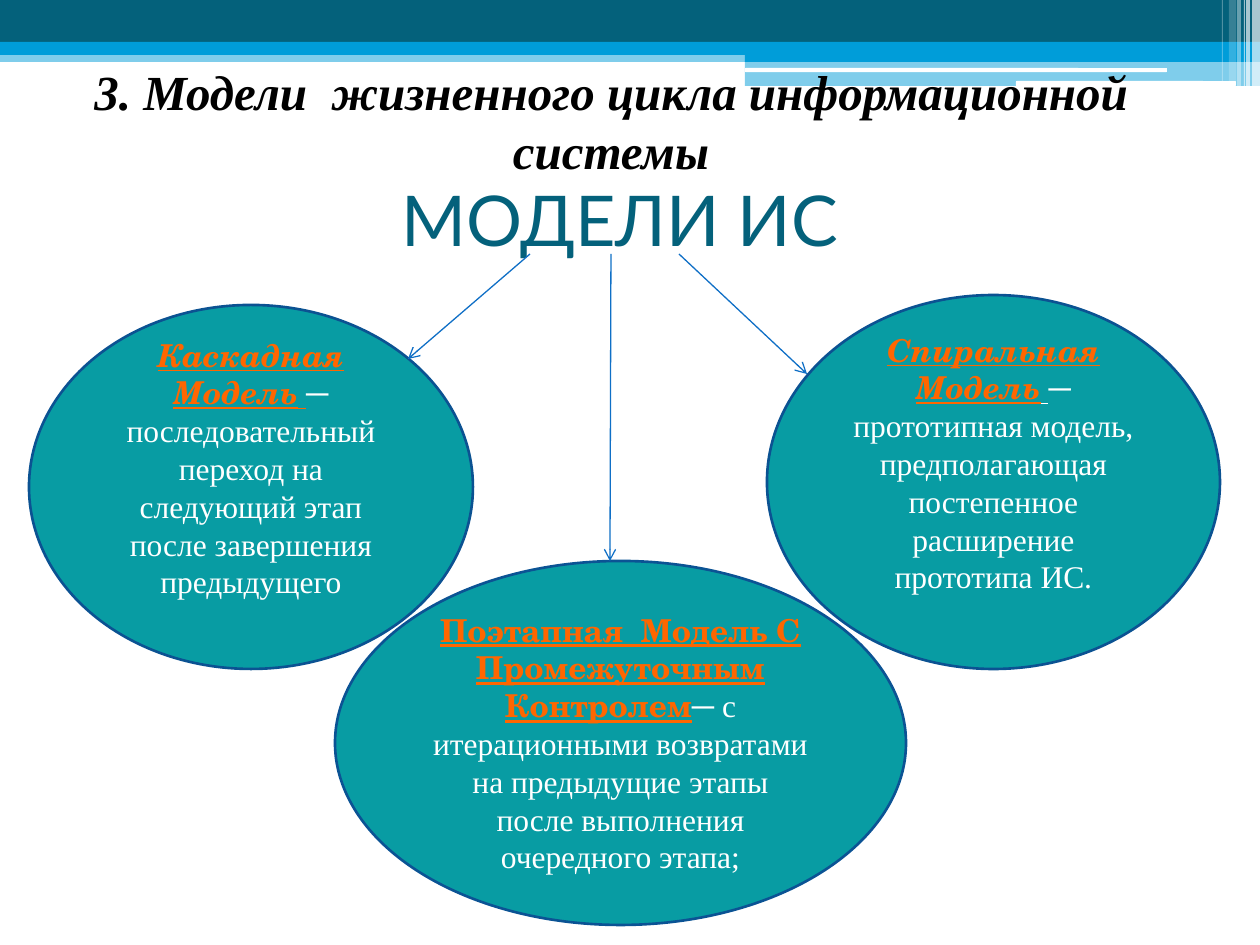
from lxml import etree
from pptx import Presentation
from pptx.dml.color import RGBColor
from pptx.enum.shapes import MSO_CONNECTOR, MSO_SHAPE
from pptx.enum.text import MSO_ANCHOR, PP_ALIGN
from pptx.oxml.ns import qn
from pptx.util import Pt

EMU_PER_PX = 914400 / 126
RECT, ROUNDED, OVAL = MSO_SHAPE.RECTANGLE, MSO_SHAPE.ROUNDED_RECTANGLE, MSO_SHAPE.OVAL
STRAIGHT = MSO_CONNECTOR.STRAIGHT
CENTER = PP_ALIGN.CENTER
MIDDLE, TOP = MSO_ANCHOR.MIDDLE, MSO_ANCHOR.TOP

DARK, BLUE, WHITE = "04617B", "009DD9", "FFFFFF"
TEAL, ARROW = "089CA3", "0F6FC6"
BODY = {"name": "Times New Roman", "size": Pt(18), "color": WHITE}
TERM = {"name": "TeX Gyre Schola", "size": Pt(18), "color": "FF6600",
        "bold": True, "underline": True}
ITALIC_TERM = {**TERM, "italic": True}
ORANGE_GAP = {**ITALIC_TERM, "name": "Times New Roman"}
WHITE_GAP = {**ORANGE_GAP, "color": WHITE}

# Header bands: left, top, width, height, colour, opacity in percent
BANDS = [
    (0, 50, 1260, 12, BLUE, 50),
    (0, 0, 1260, 43, DARK, 100),
    (0, 42, 1260, 13, BLUE, 100),
    (745, 49, 515, 13, BLUE, 100),
    (745, 61, 515, 25, BLUE, 50),
]
# White rules: left, top, width, height
RULES = [(745, 68, 422, 4), (1016, 81, 220, 5)]
# Vertical stripes at the right edge: left, width, height, opacity
STRIPES = [(1252, 8, 86, 65), (1246, 4, 86, 65), (1244, 1, 86, 60),
           (1237, 4, 86, 40), (1229, 7, 81, 20), (1222, 1, 81, 30)]

# Models: box, outline, space kept free under the text, text runs
MODELS = [
    ((29, 305, 444, 364), "0B5292", 38, [
        ("Каскадная Модель", ITALIC_TERM), (" ", ORANGE_GAP),
        ("─ последовательный переход на следующий этап после завершения "
         "предыдущего", BODY)]),
    ((335, 561, 571, 364), "0B5394", 0, [
        ("Поэтапная  Модель С Промежуточным Контролем", TERM),
        ("─ с итерационными возвратами на предыдущие этапы после выполнения "
         "очередного этапа;", BODY)]),
    ((767, 295, 453, 374), "0B5292", 38, [
        ("Спиральная Модель", ITALIC_TERM), (" ", WHITE_GAP),
        ("─ прототипная модель, предполагающая постепенное расширение "
         "прототипа ИС.", BODY)]),
]
ARROWS = [(530, 254, 408, 359), (611, 254, 610, 561), (679, 254, 807, 374)]


def px(value):
    return round(value * EMU_PER_PX)


def rgb(color):
    return RGBColor.from_string(color)


def add_block(slide, kind, box, color, opacity=100):
    shape = slide.shapes.add_shape(kind, *map(px, box))
    shape.shadow.inherit = False
    shape.fill.solid()
    shape.fill.fore_color.rgb = rgb(color)
    shape.line.fill.background()
    if opacity < 100:
        fill = shape.fill._xPr.find(qn("a:solidFill"))
        etree.SubElement(fill[0], qn("a:alpha"), val=str(opacity * 1000))
    return shape


def write_text(shape, runs, anchor):
    frame = shape.text_frame
    frame.word_wrap = True
    frame.vertical_anchor = anchor
    paragraph = frame.paragraphs[0]
    paragraph.alignment = CENTER
    for text, style in runs:
        run = paragraph.add_run()
        run.text = text
        for name, value in style.items():
            if name == "color":
                run.font.color.rgb = rgb(value)
            else:
                setattr(run.font, name, value)


def add_header(slide):
    for *box, color, opacity in BANDS:
        add_block(slide, RECT, box, color, opacity)
    for box in RULES:
        add_block(slide, ROUNDED, box, WHITE)
    for left, width, height, opacity in STRIPES:
        add_block(slide, RECT, (left, 0, width, height), WHITE, opacity)


def set_title(slide):
    title = slide.shapes.title
    title.left, title.top, title.width, title.height = map(px, (53, 145, 1134, 147))
    style = {"name": "Lato", "size": Pt(40), "color": DARK}
    write_text(title, [("МОДЕЛИ ИС", style)], MIDDLE)


def add_model(slide, box, outline, space_below, runs):
    shape = add_block(slide, OVAL, box, TEAL)
    shape.line.color.rgb = rgb(outline)
    shape.line.width = Pt(1.5)
    shape.text_frame.margin_bottom += px(space_below)
    write_text(shape, runs, MIDDLE)


def add_arrow(slide, ends):
    connector = slide.shapes.add_connector(STRAIGHT, *map(px, ends))
    connector.line.color.rgb = rgb(ARROW)
    connector.line.width = Pt(0.75)
    etree.SubElement(connector.line._get_or_add_ln(), qn("a:tailEnd"), type="arrow")
    etree.SubElement(connector._element.spPr, qn("a:effectLst"))


def add_heading(slide):
    box = slide.shapes.add_textbox(*map(px, (8, 55, 1206, 131)))
    style = {"name": "Times New Roman", "size": Pt(28), "color": "000000",
             "bold": True, "italic": True}
    write_text(box, [("3. Модели  жизненного цикла информационной системы", style)], TOP)


def main():
    presentation = Presentation()
    presentation.slide_width, presentation.slide_height = px(1260), px(945)
    slide = presentation.slides.add_slide(presentation.slide_layouts[5])

    # Header decoration and title
    add_header(slide)
    set_title(slide)

    # Models and the arrows that lead to them
    for model in MODELS:
        add_model(slide, *model)
    for ends in ARROWS:
        add_arrow(slide, ends)

    # Section heading
    add_heading(slide)
    presentation.save("out.pptx")


if __name__ == "__main__":
    main()
